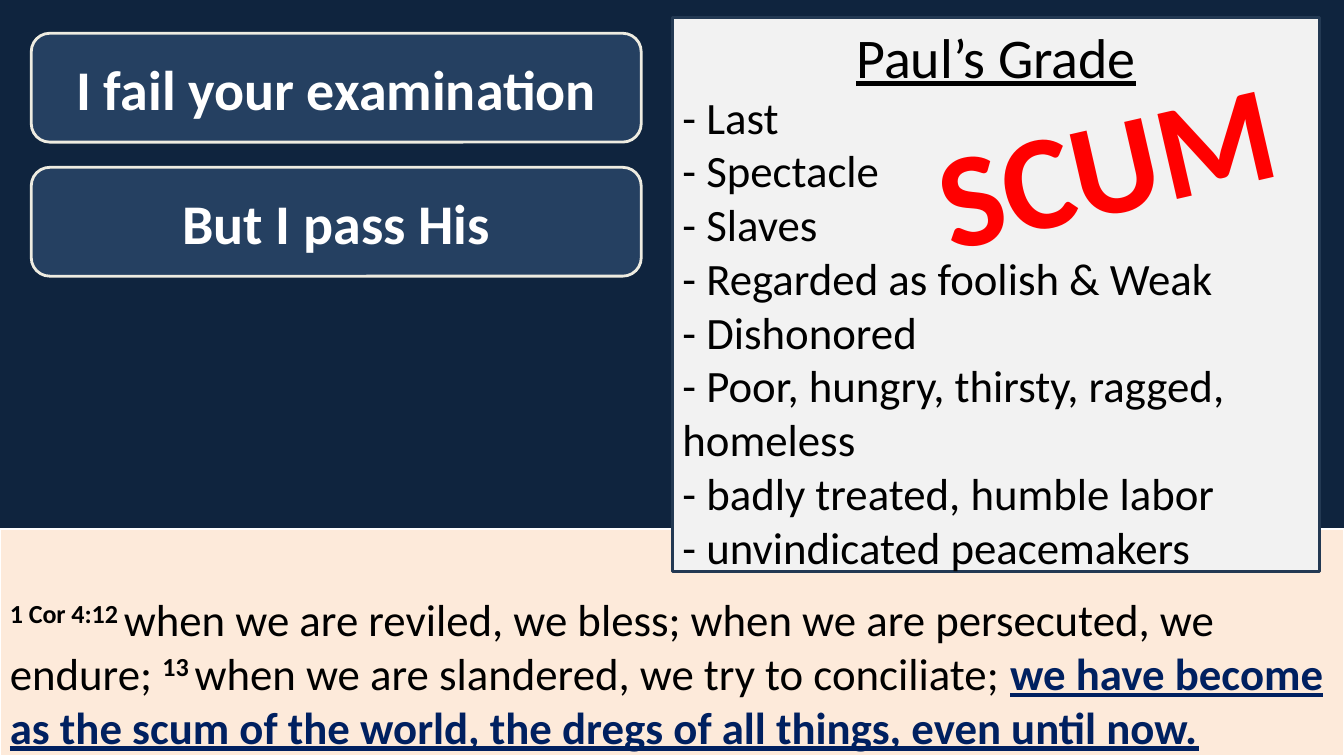
from pptx import Presentation
from pptx import util as u
from pptx.dml import color
from pptx.enum import shapes, text

SCALE = 9144
COLORS = {
    "navy": "0F243E", "peach": "FDEADA", "white": "FFFFFF", "black": "000000",
    "paper": "F2F2F2", "border": "233953", "blue": "254061", "cream": "EEECE1",
    "verse": "002060", "red": "FF0000",
}
GRADES = [
    "- Last", "- Spectacle", "- Slaves", "- Regarded as foolish & Weak",
    "- Dishonored", "- Poor, hungry, thirsty, ragged, homeless",
    "- badly treated, humble labor", "- unvindicated peacemakers",
]
VERSE = [
    ("1 Cor 4:12 ", {"bold": True, "raised": True}),
    ("when we are reviled, we bless; when we are persecuted, we endure; ", {}),
    ("13 ", {"bold": True, "raised": True}),
    ("when we are slandered, we try to conciliate; ", {}),
    ("we have become as the scum of the world, the dregs of all things, even until now.",
     {"color_name": "verse", "bold": True, "underline": True}),
]


def px(length):
    return u.Emu(length * SCALE)


def rgb(name):
    return color.RGBColor.from_string(COLORS[name])


def add_text(paragraph, words, size=32, color_name="black", bold=False,
             underline=False, raised=False, align=text.PP_ALIGN.LEFT):
    paragraph.alignment = align
    run = paragraph.add_run()
    run.text = words
    run.font.name = "Calibri"
    run.font.size = u.Pt(size)
    run.font.bold = bold
    run.font.underline = underline
    run.font.color.rgb = rgb(color_name)
    if raised:
        run._r.get_or_add_rPr().set("baseline", "30000")


def add_box(slide, left, top, width, height, fill, line=None, weight=2,
            kind=shapes.MSO_SHAPE.RECTANGLE, anchor=text.MSO_ANCHOR.TOP):
    shape = slide.shapes.add_shape(kind, px(left), px(top), px(width), px(height))
    shape.shadow.inherit = False
    shape.fill.solid()
    shape.fill.fore_color.rgb = rgb(fill)
    if line:
        shape.line.color.rgb = rgb(line)
        shape.line.width = u.Pt(weight)
    else:
        shape.line.fill.background()
    shape.text_frame.word_wrap = True
    shape.text_frame.vertical_anchor = anchor
    return shape


def add_verse(slide):
    band = add_box(slide, 0, 525, 1333, 225, "peach", "white", 1.5,
                   anchor=text.MSO_ANCHOR.BOTTOM)
    band.text_frame.margin_bottom = px(3)
    for words, style in VERSE:
        add_text(band.text_frame.paragraphs[0], words, **style)


def add_grade_panel(slide):
    frame = add_box(slide, 667, 17, 642, 550, "paper", "border").text_frame
    add_text(frame.paragraphs[0], "Paul’s Grade", size=40, underline=True,
             align=text.PP_ALIGN.CENTER)
    for grade in GRADES:
        add_text(frame.add_paragraph(), grade)


def add_stamp(slide):
    stamp = add_box(slide, 909, 97, 374, 125, "paper", anchor=text.MSO_ANCHOR.MIDDLE)
    stamp.rotation = 347.1
    add_text(stamp.text_frame.paragraphs[0], "SCUM", size=96, color_name="red",
             bold=True, align=text.PP_ALIGN.CENTER)


def add_callout(slide, top, words):
    callout = add_box(slide, 31, top, 605, 108, "blue", "cream",
                      kind=shapes.MSO_SHAPE.ROUNDED_RECTANGULAR_CALLOUT,
                      anchor=text.MSO_ANCHOR.MIDDLE)
    for index, value in enumerate((-0.22, 0.5, 0.17)):
        callout.adjustments[index] = value
    add_text(callout.text_frame.paragraphs[0], words, size=40, color_name="white",
             bold=True, align=text.PP_ALIGN.CENTER)


def main():
    presentation = Presentation()
    presentation.slide_width = px(1333)
    presentation.slide_height = px(750)
    slide = presentation.slides.add_slide(presentation.slide_layouts[6])
    slide.background.fill.solid()
    slide.background.fill.fore_color.rgb = rgb("navy")
    add_verse(slide)
    add_grade_panel(slide)
    add_stamp(slide)
    for row, words in enumerate(("I fail your examination", "But I pass His")):
        add_callout(slide, 33 + row * 133, words)
    presentation.save("out.pptx")


if __name__ == "__main__":
    main()
